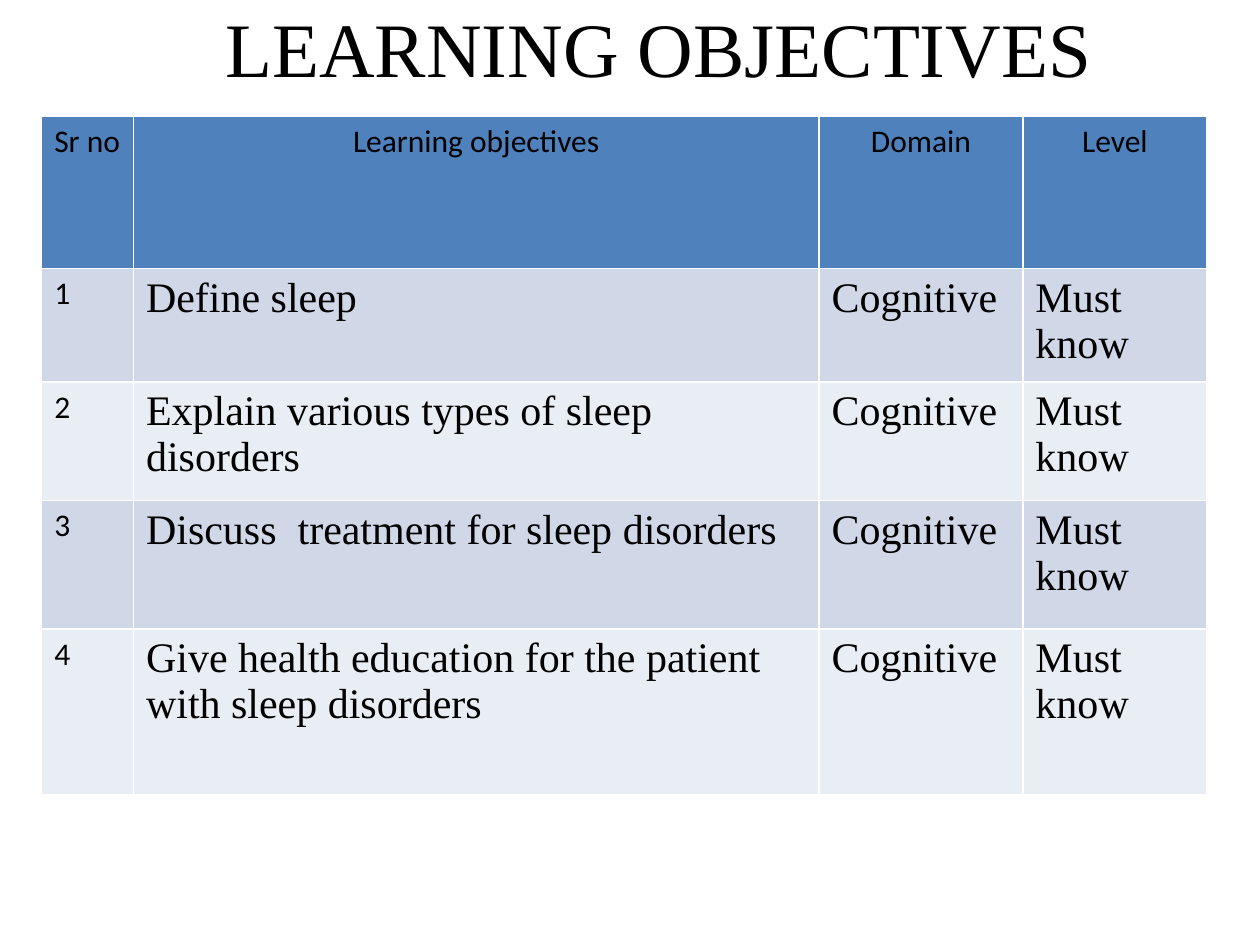
"""Build a slide with a table of learning objectives on sleep."""
from pptx import Presentation
from pptx.dml.color import RGBColor
from pptx.enum.text import MSO_ANCHOR, PP_ALIGN
from pptx.util import Cm, Pt

TITLE = "LEARNING OBJECTIVES"
HEADS = ["Sr no", "Learning objectives", "Domain", "Level"]
GOALS = [
    "Define sleep",
    "Explain various types of sleep disorders",
    "Discuss  treatment for sleep disorders",
    "Give health education for the patient with sleep disorders",
]
DOMAIN, LEVEL = "Cognitive", "Must know"
WIDTHS = [1.85, 13.82, 4.11, 3.71]
HEIGHTS = [3.07, 2.21, 2.39, 2.59, 3.35]
COLORS = {"head": "4F81BD", "odd": "D0D8E8", "even": "E9EDF4", "text": "000000"}
SERIF, SANS = "Times New Roman", "Calibri"


def style(para, name, size, align):
    para.alignment = align
    font = para.font
    font.name, font.size, font.bold = name, Pt(size), False
    font.color.rgb = RGBColor.from_string(COLORS["text"])


def add_title(slide):
    box = slide.shapes.add_textbox(Cm(1.27), Cm(-0.64), Cm(22.86), Cm(3.18))
    frame = box.text_frame
    frame.word_wrap = True
    frame.vertical_anchor = MSO_ANCHOR.MIDDLE
    frame.margin_left = Cm(1.42)
    frame.text = TITLE
    style(frame.paragraphs[0], SERIF, 44, PP_ALIGN.CENTER)


def add_grid(slide):
    rows = [HEADS] + [[str(n), goal, DOMAIN, LEVEL] for n, goal in enumerate(GOALS, 1)]
    table = slide.shapes.add_table(
        len(rows), len(HEADS), Cm(0.84), Cm(2.34), Cm(sum(WIDTHS)), Cm(sum(HEIGHTS))
    ).table
    for col, width in zip(table.columns, WIDTHS):
        col.width = Cm(width)
    for r, (row, height) in enumerate(zip(rows, HEIGHTS)):
        table.rows[r].height = Cm(height)
        shade = "head" if r == 0 else "odd" if r % 2 else "even"
        for c, text in enumerate(row):
            cell = table.cell(r, c)
            cell.text = text
            cell.fill.solid()
            cell.fill.fore_color.rgb = RGBColor.from_string(COLORS[shade])
            name, size = (SERIF, 24) if r and c else (SANS, 18)
            align = PP_ALIGN.CENTER if r == 0 and c else PP_ALIGN.LEFT
            style(cell.text_frame.paragraphs[0], name, size, align)


def main():
    deck = Presentation()
    deck.slide_width, deck.slide_height = Cm(25.4), Cm(19.05)
    slide = deck.slides.add_slide(deck.slide_layouts[6])
    add_title(slide)
    add_grid(slide)
    deck.save("out.pptx")


if __name__ == "__main__":
    main()
